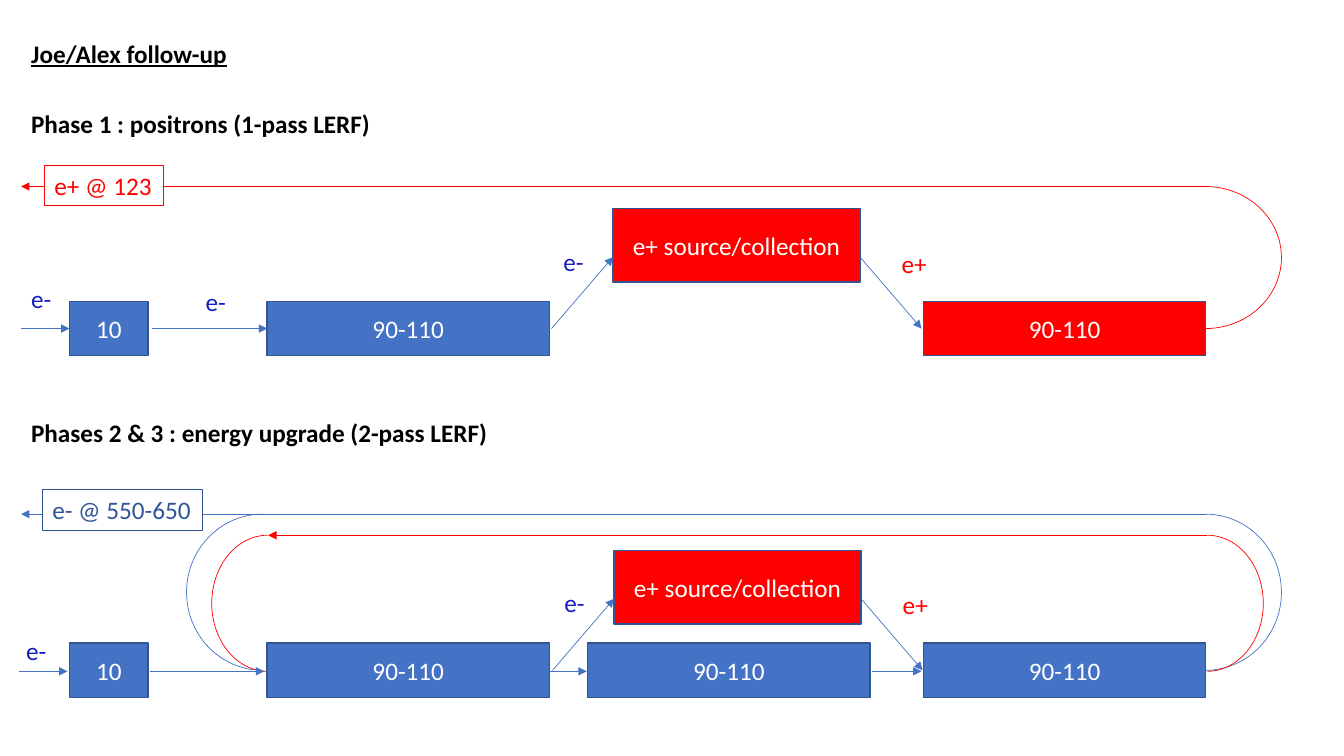
"""Build the LERF follow-up slide: positron phase above, energy-upgrade phases below."""
import pptx
import pptx.util
import pptx.dml.color
import pptx.enum.shapes
import pptx.enum.text
import pptx.oxml
import pptx.oxml.ns

C = {"blue": "4472C4", "edge": "325491", "red": "FF0000", "white": "FFFFFF",
     "black": "000000", "electron": "151DC0", "energy": "2F5597"}
RGB = {name: pptx.dml.color.RGBColor.from_string(code) for name, code in C.items()}
SHAPE = pptx.enum.shapes.MSO_SHAPE
ALIGN = pptx.enum.text.PP_ALIGN
ANCHOR = pptx.enum.text.MSO_ANCHOR
FIT = pptx.enum.text.MSO_AUTO_SIZE
CELL = pptx.util.Inches(0.1)

prs = pptx.Presentation()
prs.slide_width = pptx.util.Inches(13.33)
prs.slide_height = pptx.util.Inches(7.5)
s = prs.slides.add_slide(prs.slide_layouts[5])


def write(sp, text, color="black", bold=None, underline=None, centred=False):
    """Fill a shape with one line of text; uncentred text hugs its box."""
    tf = sp.text_frame
    tf.word_wrap = centred
    tf.auto_size = FIT.NONE if centred else FIT.SHAPE_TO_FIT_TEXT
    tf.vertical_anchor = ANCHOR.MIDDLE if centred else ANCHOR.TOP
    p = tf.paragraphs[0]
    p.alignment = ALIGN.CENTER if centred else ALIGN.LEFT
    r = p.add_run()
    r.text = text
    r.font.name, r.font.size = "Calibri", pptx.util.Pt(18)
    r.font.bold, r.font.underline = bold, underline
    r.font.color.rgb = RGB[color]


def arrow(x1, y1, x2, y2, color="blue"):
    """Draw a thin arrow between two grid points."""
    ends = [round(v * CELL) for v in (x1, y1, x2, y2)]
    cn = s.shapes.add_connector(pptx.enum.shapes.MSO_CONNECTOR.STRAIGHT, *ends)
    cn.line.color.rgb = RGB[color]
    cn.line.width = pptx.util.Pt(0.5)
    ns = pptx.oxml.ns.nsdecls("a")
    cn.line._get_or_add_ln().append(pptx.oxml.parse_xml(f'<a:tailEnd {ns} type="triangle"/>'))
    cn._element.spPr.append(pptx.oxml.parse_xml(f"<a:effectLst {ns}/>"))


title = s.shapes.title
title.left, title.top, title.width, title.height = [round(v * CELL) for v in (2.1, 3.3, 21.5, 4)]
write(title, "Joe/Alex follow-up", bold=True, underline=True)

QUARTER = 54
RIGHT, LEFT = (3 * QUARTER, 0), (QUARTER, 2 * QUARTER)
arcs = [
    (112, 18.5, 15.1, 14.1, "red", RIGHT),
    (112, 51, 15.1, 15.5, "blue", RIGHT),
    (18.5, 51, 15.1, 15.5, "blue", LEFT),
    (114.2, 53.1, 11.1, 13.5, "red", RIGHT),
    (21, 53.1, 11.1, 13.5, "red", LEFT),
]
for x, y, w, h, color, starts in arcs:
    for start in starts:
        sp = s.shapes.add_shape(SHAPE.ARC, *[round(v * CELL) for v in (x, y, w, h)])
        sp.adjustments[0] = start
        sp.adjustments[1] = start + QUARTER
        sp.shadow.inherit = False
        sp.fill.background()
        sp.line.color.rgb = RGB[color]
        sp.line.width = pptx.util.Pt(0.5)

arrow(119.6, 18.5, 2.1, 18.5, "red")
arrow(119.6, 51, 2.1, 51)
arrow(119.7, 53.1, 26.6, 53.1, "red")

PHASE_1, PHASE_2 = 29.9, 63.8
blocks = [
    (6.9, PHASE_1, 7.8, "10", "blue"),
    (26.5, PHASE_1, 28, "90-110", "blue"),
    (91.6, PHASE_1, 28, "90-110", "red"),
    (6.9, PHASE_2, 7.8, "10", "blue"),
    (26.5, PHASE_2, 28, "90-110", "blue"),
    (58.3, PHASE_2, 28, "90-110", "blue"),
    (91.6, PHASE_2, 28, "90-110", "blue"),
]
boxes = [(x, y, w, 5.4, text, fill, "edge", 1, "white") for x, y, w, text, fill in blocks]
boxes += [
    (4.4, 16.4, 11.8, 4, "e+ @ 123", "white", "red", 0.75, "red"),
    (4.2, 48.6, 15.9, 4, "e- @ 550-650", "white", "edge", 0.75, "energy"),
]
labels = [
    (2.1, 10.3, 35.9, "Phase 1 : positrons (1-pass LERF)", "black", True),
    (2.1, 40.9, 47.7, "Phases 2 & 3 : energy upgrade (2-pass LERF)", "black", True),
    (2.1, 27.6, 4.1, "e-", "electron", None),
    (19.4, 27.9, 4.1, "e-", "electron", None),
    (1.6, 62.5, 4.1, "e-", "electron", None),
]
links = [
    (2.1, 32.6, 6.9, 32.6),
    (15.1, 32.6, 26.5, 32.6),
    (1.9, 66.6, 6.7, 66.6),
    (14.9, 66.6, 26.2, 66.6),
    (53.3, 66.6, 58.2, 66.6),
    (86.5, 66.6, 91.4, 66.6),
]
for x, y in ((60.8, 20.7), (60.9, 54.6)):
    boxes.append((x, y, 24.5, 7.3, "e+ source/collection", "red", "edge", 1, "white"))
    labels.append((x - 5.9, y + 3.2, 4.1, "e-", "electron", None))
    labels.append((x + 27.65, y + 3.4, 4.5, "e+", "red", None))
    links.append((x - 6.1, y + 11.9, x, y + 4.8))
    links.append((x + 24.5, y + 4.8, x + 30.6, y + 11.9))

for x, y, w, h, text, fill, edge, weight, color in boxes:
    sp = s.shapes.add_shape(SHAPE.RECTANGLE, *[round(v * CELL) for v in (x, y, w, h)])
    sp.shadow.inherit = False
    sp.fill.solid()
    sp.fill.fore_color.rgb = RGB[fill]
    sp.line.color.rgb = RGB[edge]
    sp.line.width = pptx.util.Pt(weight)
    write(sp, text, color=color, centred=color == "white")

for x, y, w, text, color, bold in labels:
    sp = s.shapes.add_textbox(*[round(v * CELL) for v in (x, y, w, 4)])
    write(sp, text, color=color, bold=bold)

for link in links:
    arrow(*link)

prs.save("out.pptx")
